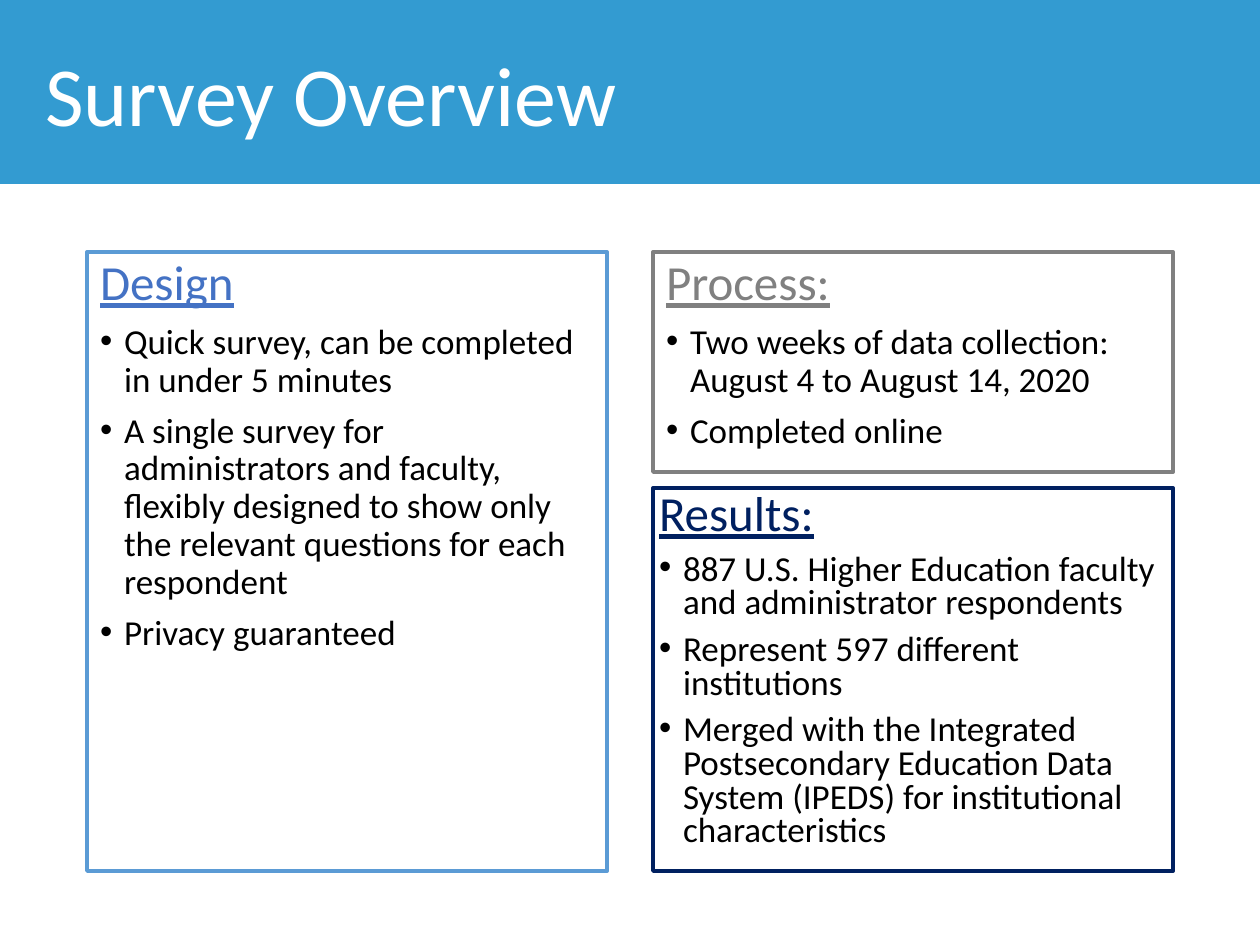
from lxml import etree
from pptx import Presentation
from pptx.dml.color import RGBColor
from pptx.enum.shapes import MSO_SHAPE
from pptx.enum.text import MSO_ANCHOR, PP_ALIGN
from pptx.oxml.ns import qn
from pptx.util import Emu, Pt

EMU_PER_PX = 914400 / 126
FONT = "Calibri"
BANNER_COLOR = "339BD1"
TITLE = "Survey Overview"

LEFT_X, RIGHT_X, PANEL_WIDTH = 87, 653, 520
TOP, BOTTOM = 252, 871
PROCESS_BOTTOM, RESULTS_TOP = 472, 488
BULLET_INDENT = 24

PANELS = [
    {
        "heading": "Design", "color": "4472C4", "border": "5B9BD5", "fill": "FFFFFF",
        "x": LEFT_X, "top": TOP, "bottom": BOTTOM, "inset": (13, 6), "spacing": 0.9,
        "bullets": [
            "Quick survey, can be completed in under 5 minutes",
            "A single survey for administrators and faculty, flexibly designed "
            "to show only the relevant questions for each respondent",
            "Privacy guaranteed",
        ],
    },
    {
        "heading": "Process:", "color": "808080", "border": "808080", "fill": None,
        "x": RIGHT_X, "top": TOP, "bottom": PROCESS_BOTTOM, "inset": (13, 6), "spacing": 0.9,
        "bullets": [
            "Two weeks of data collection: August 4 to August 14, 2020",
            "Completed online",
        ],
    },
    {
        "heading": "Results:", "color": "002060", "border": "002060", "fill": None,
        "x": RIGHT_X, "top": RESULTS_TOP, "bottom": BOTTOM, "inset": (6, 6), "spacing": 0.8,
        "bullets": [
            "887 U.S. Higher Education faculty and administrator respondents",
            "Represent 597 different institutions",
            "Merged with the Integrated Postsecondary Education Data System "
            "(IPEDS) for institutional characteristics",
        ],
    },
]


def px(value):
    return Emu(round(value * EMU_PER_PX))


def rgb(hex_color):
    return RGBColor.from_string(hex_color)


def add_box(slide, x, y, width, height, fill, border, border_width):
    box = slide.shapes.add_shape(MSO_SHAPE.RECTANGLE, px(x), px(y), px(width), px(height))
    box.shadow.inherit = False
    if fill:
        box.fill.solid()
        box.fill.fore_color.rgb = rgb(fill)
    else:
        box.fill.background()
    box.line.color.rgb = rgb(border)
    box.line.width = Pt(border_width)
    return box


def style(paragraph, size, color, spacing, underline=False):
    paragraph.alignment = PP_ALIGN.LEFT
    paragraph.line_spacing = spacing
    font = paragraph.font
    font.name, font.size, font.underline = FONT, Pt(size), underline
    font.color.rgb = rgb(color)


def add_bullet(paragraph):
    properties = paragraph._p.get_or_add_pPr()
    properties.set("marL", str(px(BULLET_INDENT)))
    properties.set("indent", str(-px(BULLET_INDENT)))
    etree.SubElement(properties, qn("a:buFont")).set("typeface", "Arial")
    etree.SubElement(properties, qn("a:buChar")).set("char", "•")


def add_title(slide):
    title = slide.shapes.add_textbox(px(33), px(8), px(1086), px(183))
    frame = title.text_frame
    frame.word_wrap = True
    frame.vertical_anchor = MSO_ANCHOR.MIDDLE
    frame.text = TITLE
    style(frame.paragraphs[0], 48, "FFFFFF", 0.9)


def add_panel(slide, panel):
    box = add_box(slide, panel["x"], panel["top"], PANEL_WIDTH,
                  panel["bottom"] - panel["top"], panel["fill"], panel["border"], 2.25)
    frame = box.text_frame
    frame.word_wrap = True
    frame.vertical_anchor = MSO_ANCHOR.TOP
    side, end = panel["inset"]
    frame.margin_left = frame.margin_right = px(side)
    frame.margin_top = frame.margin_bottom = px(end)

    frame.text = panel["heading"]
    style(frame.paragraphs[0], 28, panel["color"], panel["spacing"], underline=True)
    for bullet in panel["bullets"]:
        paragraph = frame.add_paragraph()
        paragraph.text = bullet
        add_bullet(paragraph)
        style(paragraph, 20, "000000", panel["spacing"])
        paragraph.space_before = Pt(7.5)


def main():
    presentation = Presentation()
    presentation.slide_width, presentation.slide_height = px(1260), px(945)
    slide = presentation.slides.add_slide(presentation.slide_layouts[6])
    add_box(slide, 0, 0, 1260, 183, BANNER_COLOR, BANNER_COLOR, 1)
    add_title(slide)
    for panel in PANELS:
        add_panel(slide, panel)
    presentation.save("out.pptx")


if __name__ == "__main__":
    main()
